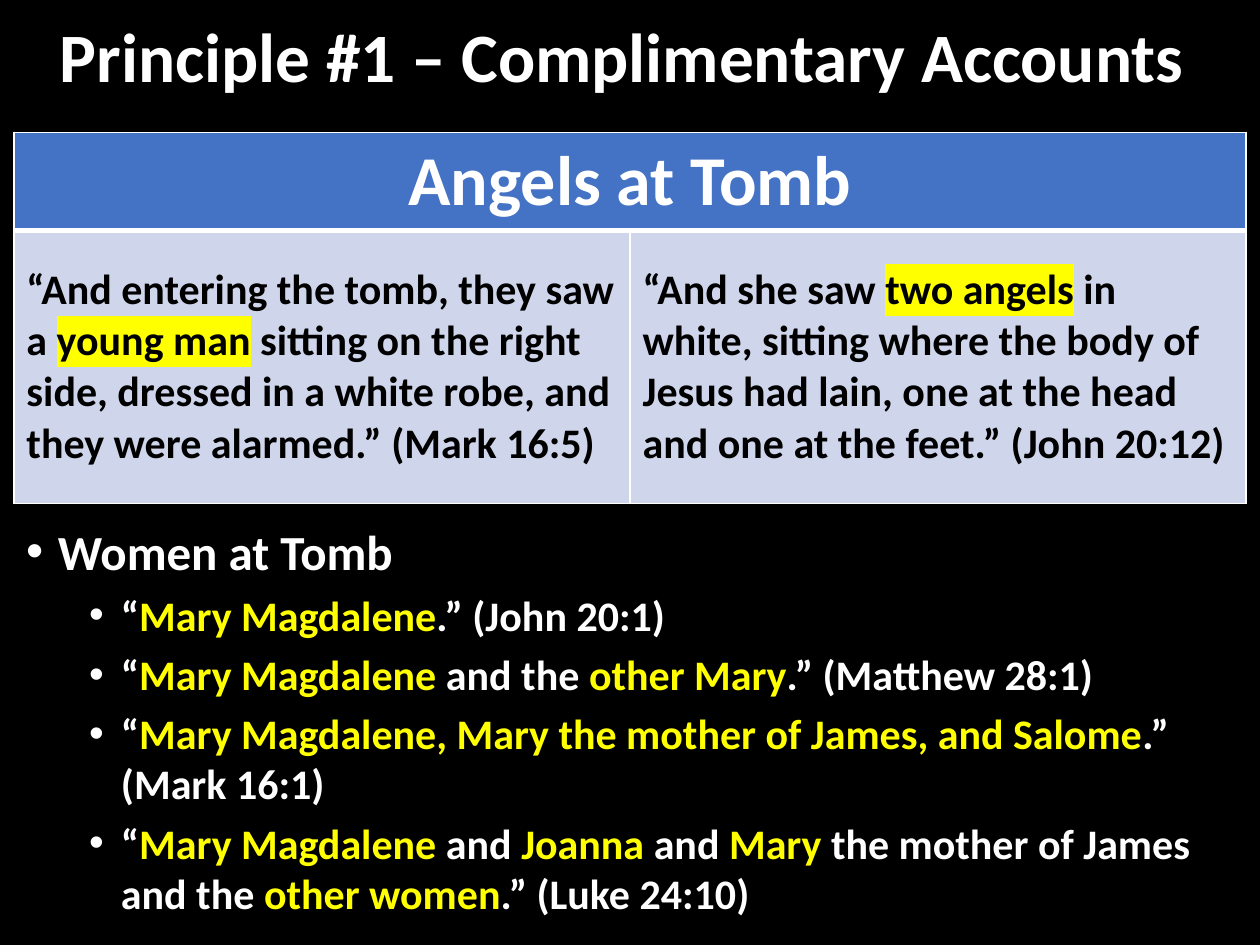
from dataclasses import dataclass

from lxml import etree
from pptx import Presentation
from pptx.dml.color import RGBColor
from pptx.enum.text import MSO_ANCHOR, PP_ALIGN
from pptx.oxml.ns import qn
from pptx.util import Cm, Pt

MIDDLE = MSO_ANCHOR.MIDDLE
TOP = MSO_ANCHOR.TOP
CENTER = PP_ALIGN.CENTER
LEFT = PP_ALIGN.LEFT

BLACK = RGBColor(0x00, 0x00, 0x00)
WHITE = RGBColor(0xFF, 0xFF, 0xFF)
YELLOW = RGBColor(0xFF, 0xFF, 0x00)
BLUE = RGBColor(0x44, 0x72, 0xC4)
PALE = RGBColor(0xCF, 0xD5, 0xEA)

FONT = "Calibri"
MARK = "*"
EDGE = 0.28
WIDTH = 24.84


@dataclass
class Style:
    size: float
    color: RGBColor
    accent: RGBColor = YELLOW
    glow: bool = False
    align: PP_ALIGN = LEFT


@dataclass
class Quote:
    text: str
    col: int


@dataclass
class Point:
    text: str
    style: Style
    indent: float
    before: float


TITLE = Style(39.6, WHITE, align=CENTER)
HEAD = Style(40, WHITE, align=CENTER)
CELL = Style(24, BLACK, accent=BLACK, glow=True)
MAIN = Style(28, WHITE)
SUB = Style(24, WHITE)

QUOTES = [
    Quote("“And entering the tomb, they saw a *young man* sitting on the right "
          "side, dressed in a white robe, and they were alarmed.” (Mark 16:5)", 0),
    Quote("“And she saw *two angels* in white, sitting where the body of Jesus "
          "had lain, one at the head and one at the feet.” (John 20:12)", 1),
]

VERSES = [
    "“*Mary Magdalene*.” (John 20:1)",
    "“*Mary Magdalene* and the *other Mary*.” (Matthew 28:1)",
    "“*Mary Magdalene, Mary the mother of James, and Salome*.” (Mark 16:1)",
    "“*Mary Magdalene* and *Joanna* and *Mary* the mother of James and the "
    "*other women*.” (Luke 24:10)",
]

POINTS = [Point("Women at Tomb", MAIN, 0.64, 10)]
POINTS += [Point(verse, SUB, 1.91, 5) for verse in VERSES]


def add_fill(parent, color: RGBColor):
    fill = etree.SubElement(parent, qn("a:solidFill"))
    etree.SubElement(fill, qn("a:srgbClr"), val=str(color))


def write(para, text: str, style: Style):
    para.alignment = style.align
    for order, part in enumerate(text.split(MARK)):
        marked = order % 2 == 1
        run = para.add_run()
        run.text = part
        font = run.font
        font.name = FONT
        font.size = Pt(style.size)
        font.bold = True
        font.color.rgb = style.accent if marked else style.color
        if marked and style.glow:
            props = font._element
            glow = etree.Element(qn("a:highlight"))
            etree.SubElement(glow, qn("a:srgbClr"), val=str(YELLOW))
            props.find(qn("a:solidFill")).addnext(glow)


def add_box(slide, top: float, height: float):
    box = slide.shapes.add_textbox(Cm(EDGE), Cm(top), Cm(WIDTH), Cm(height))
    frame = box.text_frame
    frame.word_wrap = True
    frame.vertical_anchor = MIDDLE
    return frame


def add_bullet(para, indent: float):
    props = para._p.get_or_add_pPr()
    props.set("marL", str(Cm(indent)))
    props.set("indent", str(-Cm(0.64)))
    etree.SubElement(props, qn("a:buFont"), typeface="Arial")
    etree.SubElement(props, qn("a:buChar"), char="•")


def paint(cell, color: RGBColor, top: float, bottom: float):
    props = cell._tc.get_or_add_tcPr()
    widths = {"a:lnL": 1, "a:lnR": 1, "a:lnT": top, "a:lnB": bottom}
    for side, width in widths.items():
        line = etree.SubElement(props, qn(side), w=str(Pt(width)))
        add_fill(line, WHITE)
    cell.fill.solid()
    cell.fill.fore_color.rgb = color


def add_grid(slide):
    shape = slide.shapes.add_table(2, 2, Cm(EDGE), Cm(2.67), Cm(WIDTH), Cm(7.31))
    table = shape.table
    for row, height in zip(table.rows, (1.8, 5.51)):
        row.height = Cm(height)
    for col in range(2):
        paint(table.cell(0, col), BLUE, 1, 3)
        paint(table.cell(1, col), PALE, 3, 1)
    head = table.cell(0, 0)
    head.merge(table.cell(0, 1))
    head.vertical_anchor = TOP
    write(head.text_frame.paragraphs[0], "Angels at Tomb", HEAD)
    for quote in QUOTES:
        cell = table.cell(1, quote.col)
        cell.vertical_anchor = MIDDLE
        write(cell.text_frame.paragraphs[0], quote.text, CELL)


def add_title(slide):
    para = add_box(slide, 0.28, 1.88).paragraphs[0]
    para.line_spacing = 0.9
    write(para, "Principle #1 – Complimentary Accounts ", TITLE)


def add_list(slide, points: list[Point]):
    frame = add_box(slide, 10.13, 8.76)
    for order, point in enumerate(points):
        para = frame.add_paragraph() if order else frame.paragraphs[0]
        para.space_before = Pt(point.before)
        add_bullet(para, point.indent)
        write(para, point.text, point.style)


def main():
    deck = Presentation()
    deck.slide_width = Cm(25.4)
    deck.slide_height = Cm(19.05)
    slide = deck.slides.add_slide(deck.slide_layouts[6])
    back = slide.background.fill
    back.solid()
    back.fore_color.rgb = BLACK
    add_grid(slide)
    add_title(slide)
    add_list(slide, POINTS)
    deck.save("out.pptx")


if __name__ == "__main__":
    main()
